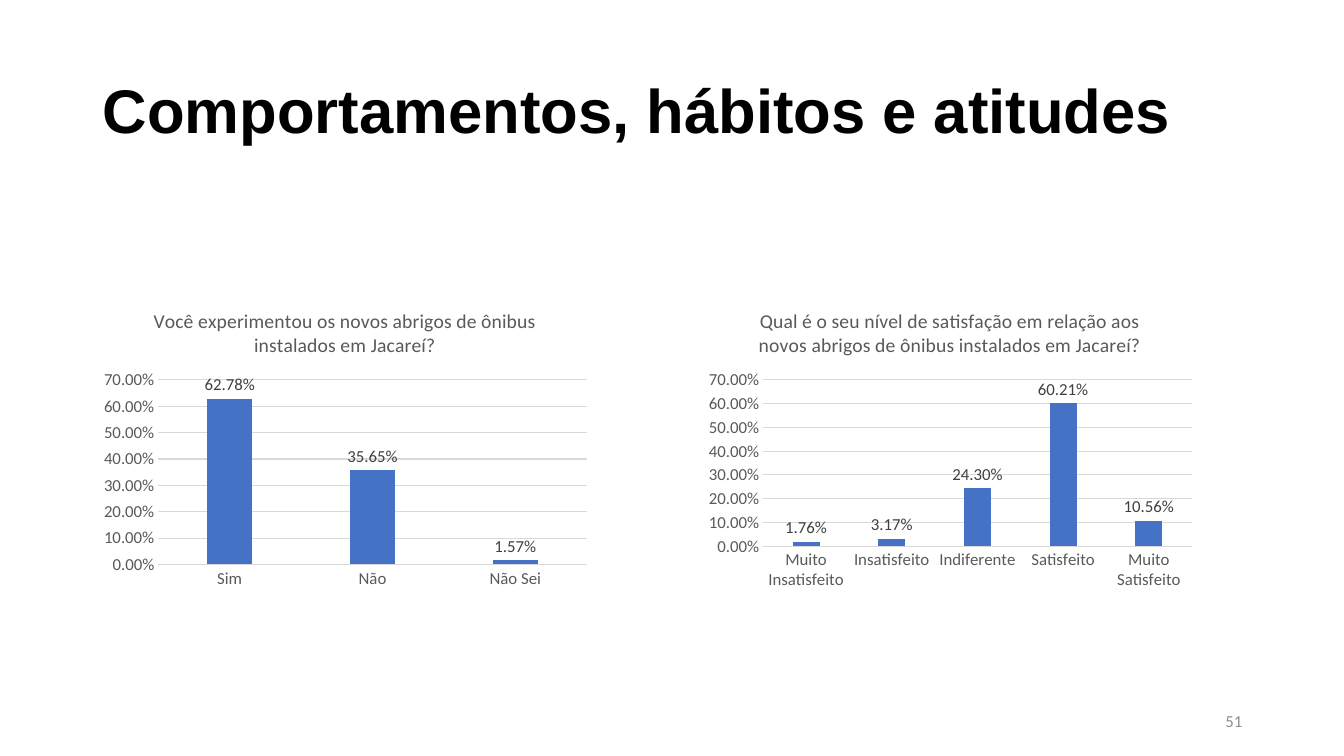
from dataclasses import dataclass

from lxml import etree
from pptx import Presentation
from pptx.chart.data import CategoryChartData
from pptx.dml.color import RGBColor
from pptx.enum.chart import XL_CHART_TYPE, XL_LABEL_POSITION, XL_TICK_MARK
from pptx.enum.text import MSO_ANCHOR, MSO_AUTO_SIZE, PP_ALIGN
from pptx.oxml.ns import qn
from pptx.util import Inches, Pt

COLUMNS = XL_CHART_TYPE.COLUMN_CLUSTERED
OUTSIDE = XL_LABEL_POSITION.OUTSIDE_END
NO_TICK = XL_TICK_MARK.NONE
MIDDLE = MSO_ANCHOR.MIDDLE
NO_FIT = MSO_AUTO_SIZE.NONE
LEFT, RIGHT = PP_ALIGN.LEFT, PP_ALIGN.RIGHT

WIDTH, HEIGHT = 13.33, 7.5
MARGIN = 0.92
CHART_TOP, CHART_W, CHART_H, CHART_STEP = 2.9, 5, 3, 6
PERCENT = "0.00%"


@dataclass(frozen=True)
class Theme:
    """Fonts, colours and type sizes of the slide."""
    heading: str = "Arial"
    body: str = "Calibri"
    black: str = "000000"
    bar: str = "4472C4"
    axis: str = "595959"
    label: str = "404040"
    grid: str = "D9D9D9"
    number: str = "8C8C8C"
    title_size: int = 44
    chart_title_size: int = 14
    small_size: int = 12


THEME = Theme()

CHARTS = [
    ("Você experimentou os novos abrigos de ônibus instalados em Jacareí?",
     {"Sim": 0.6278, "Não": 0.3565, "Não Sei": 0.0157}, 0.61),
    ("Qual é o seu nível de satisfação em relação aos novos abrigos de "
     "ônibus instalados em Jacareí?",
     {"Muito Insatisfeito": 0.0176, "Insatisfeito": 0.0317,
      "Indiferente": 0.243, "Satisfeito": 0.6021,
      "Muito Satisfeito": 0.1056}, 0.55),
]


def set_font(font, name, size, color, bold=False):
    """Apply a typeface, size, colour and weight."""
    font.name, font.size, font.bold = name, Pt(size), bold
    font.color.rgb = RGBColor.from_string(color)


def set_line(line, color):
    """Apply the thin chart line style."""
    line.color.rgb = RGBColor.from_string(color)
    line.width = Pt(0.75)


def place_plot(chart, x, y, w, h):
    """Fix the inner plot area as shares of the chart."""
    plot_area = chart._chartSpace.chart.plotArea
    for old in plot_area.findall(qn("c:layout")):
        plot_area.remove(old)
    layout = etree.Element(qn("c:layout"))
    manual = etree.SubElement(layout, qn("c:manualLayout"))
    values = {"layoutTarget": "inner", "xMode": "edge", "yMode": "edge",
              "x": x, "y": y, "w": w, "h": h}
    for tag, value in values.items():
        etree.SubElement(manual, qn(f"c:{tag}")).set("val", str(value))
    plot_area.insert(0, layout)


def add_title(slide, text, box):
    """Fill the title placeholder in the given box."""
    sp = slide.shapes.title
    sp.left, sp.top, sp.width, sp.height = map(Inches, box)
    tf = sp.text_frame
    tf.text = text
    tf.auto_size, tf.vertical_anchor = NO_FIT, MIDDLE
    p = tf.paragraphs[0]
    p.alignment, p.line_spacing = LEFT, 0.9
    set_font(p.font, THEME.heading, THEME.title_size, THEME.black, True)


def add_page_number(slide, text, box):
    """Add the right-aligned page number."""
    tf = slide.shapes.add_textbox(*map(Inches, box)).text_frame
    tf.word_wrap, tf.vertical_anchor = True, MIDDLE
    p = tf.paragraphs[0]
    p.text, p.alignment = text, RIGHT
    set_font(p.font, THEME.body, THEME.small_size, THEME.number)


def style_axes(chart):
    """Format both axes and the gridlines."""
    for axis in (chart.category_axis, chart.value_axis):
        axis.major_tick_mark = axis.minor_tick_mark = NO_TICK
        set_font(axis.tick_labels.font, THEME.body, THEME.small_size, THEME.axis)
    set_line(chart.category_axis.format.line, THEME.grid)
    axis = chart.value_axis
    axis.format.line.fill.background()
    axis.minimum_scale, axis.maximum_scale, axis.major_unit = 0, 0.7, 0.1
    set_line(axis.major_gridlines.format.line, THEME.grid)
    axis.tick_labels.number_format = PERCENT
    axis.tick_labels.number_format_is_linked = False


def add_survey_chart(slide, question, answers, plot_share, box):
    """Add a column chart of the answers to one question."""
    data = CategoryChartData(number_format=PERCENT)
    data.categories = list(answers)
    data.add_series("Series 1", list(answers.values()))
    chart = slide.shapes.add_chart(COLUMNS, *map(Inches, box), data).chart
    set_font(chart.font, THEME.body, THEME.small_size, THEME.black)
    chart.has_legend = False
    tf = chart.chart_title.text_frame
    tf.text = question
    set_font(tf.paragraphs[0].font, THEME.body, THEME.chart_title_size, THEME.axis)
    chart.chart_title.include_in_layout = False
    style_axes(chart)
    plot = chart.plots[0]
    plot.vary_by_categories = False
    plot.gap_width, plot.overlap = 219, -27
    fill = plot.series[0].format.fill
    fill.solid()
    fill.fore_color.rgb = RGBColor.from_string(THEME.bar)
    labels = plot.series[0].data_labels
    labels.show_value, labels.position = True, OUTSIDE
    labels.number_format, labels.number_format_is_linked = PERCENT, False
    set_font(labels.font, THEME.body, THEME.small_size, THEME.label)
    place_plot(chart, 0.13, 0.29, 0.85, plot_share)


def main():
    """Build and save the slide."""
    prs = Presentation()
    prs.slide_width, prs.slide_height = Inches(WIDTH), Inches(HEIGHT)
    slide = prs.slides.add_slide(prs.slide_layouts[5])
    add_title(slide, "Comportamentos, hábitos e atitudes", (MARGIN, 0.4, 11.5, 1.45))
    add_page_number(slide, "51", (9.42, 6.95, 3, 0.4))
    for i, (question, answers, plot_share) in enumerate(CHARTS):
        box = (MARGIN + i * CHART_STEP, CHART_TOP, CHART_W, CHART_H)
        add_survey_chart(slide, question, answers, plot_share, box)
    prs.save("out.pptx")


if __name__ == "__main__":
    main()
